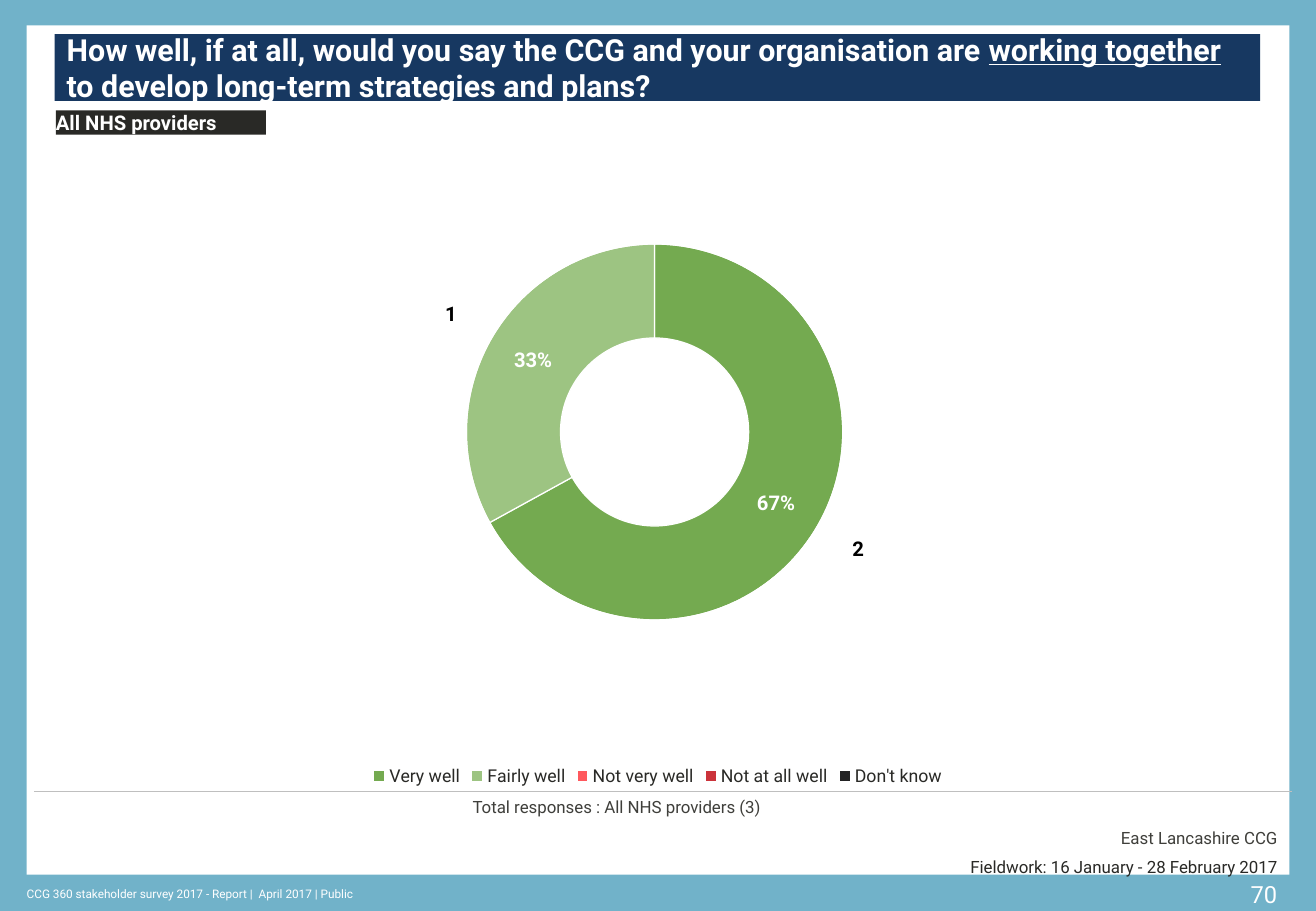
from lxml import etree
from pptx import Presentation
from pptx.chart.data import CategoryChartData
from pptx.dml.color import RGBColor
from pptx.enum.chart import XL_CHART_TYPE, XL_LEGEND_POSITION
from pptx.enum.shapes import MSO_CONNECTOR, MSO_SHAPE
from pptx.enum.text import MSO_ANCHOR, PP_ALIGN
from pptx.oxml.ns import qn
from pptx.util import Inches, Pt

COLORS = {
    "frame": "71B2C9", "white": "FFFFFF", "navy": "173861", "dark": "292926",
    "grey": "3F3F3B", "rule": "BFBFBF", "black": "000000",
}
ANSWERS = {
    "Very well": "74AA50", "Fairly well": "9DC482", "Not very well": "FF585D",
    "Not at all well": "CB333B", "Don't know": "222223",
}
PERCENTAGES = (67, 33, 0, 0, 0)
COUNTS = (2, 1, 0, 0, 0)
FONT = "Roboto"


def color(name):
    """Return the named colour of the slide."""
    return RGBColor.from_string(COLORS[name])


def style_font(font, size, name, bold=False):
    """Set size, colour and weight of a font."""
    font.name, font.size, font.bold = FONT, Pt(size), bold
    font.color.rgb = color(name)


def add_panel(page, box, fill):
    """Add a plain filled rectangle."""
    panel = page.shapes.add_shape(MSO_SHAPE.RECTANGLE, *map(Inches, box))
    panel.shadow.inherit = False
    panel.fill.solid()
    panel.fill.fore_color.rgb = color(fill)
    panel.line.fill.background()
    return panel


def prepare_frame(shape, inset=0.0, anchor=MSO_ANCHOR.TOP):
    """Set wrapping, insets and anchor of a text frame."""
    frame = shape.text_frame
    frame.word_wrap = True
    frame.vertical_anchor = anchor
    frame.margin_left = frame.margin_right = Inches(inset)
    frame.margin_top = frame.margin_bottom = Inches(inset / 2)
    return frame


def write(para, text, size, name, align=PP_ALIGN.LEFT, bold=False):
    """Fill a paragraph with text in one style."""
    para.text = text
    para.alignment = align
    style_font(para.font, size, name, bold)


def add_note(page, box, text, size, name, align=PP_ALIGN.LEFT, anchor=MSO_ANCHOR.TOP):
    """Add a one-line text box without insets."""
    frame = prepare_frame(page.shapes.add_textbox(*map(Inches, box)), anchor=anchor)
    write(frame.paragraphs[0], text, size, name, align)


def add_heading(page, left, top):
    """Add the question bar and the group tag below it."""
    bar = add_panel(page, (left, top, 9.92, 0.55), "navy")
    para = prepare_frame(bar, 0.1, MSO_ANCHOR.MIDDLE).paragraphs[0]
    para.alignment = PP_ALIGN.LEFT
    style_font(para.font, 18, "white", True)
    para.add_run().text = "How well, if at all, would you say the CCG and your organisation are "
    stressed = para.add_run()
    stressed.text = "working together"
    stressed.font.underline = True
    para.add_run().text = " to develop long-term strategies and plans?"
    tag = add_panel(page, (left + 0.01, top + 0.63, 1.73, 0.2), "dark")
    write(prepare_frame(tag).paragraphs[0], "All NHS providers", 12, "white", bold=True)


def make_layout(x, y, w, h, inner=False):
    """Build a manual chart layout from fractions of the chart area."""
    layout = etree.Element(qn("c:layout"))
    manual = etree.SubElement(layout, qn("c:manualLayout"))
    settings = [("layoutTarget", "inner")] if inner else []
    settings += [("xMode", "edge"), ("yMode", "edge"), ("x", x), ("y", y), ("w", w), ("h", h)]
    for tag, value in settings:
        etree.SubElement(manual, qn(f"c:{tag}")).set("val", str(value))
    return layout


def style_ring(ring, values, fills, label_color, number_format):
    """Colour the slices of a ring and label those above zero."""
    for index, value in enumerate(values):
        look = ring.points[index].format
        if fills:
            look.fill.solid()
            look.fill.fore_color.rgb = RGBColor.from_string(fills[index])
        else:
            look.fill.background()
        look.line.color.rgb = color("white")
        look.line.width = Pt(0.75)
    labels = ring.data_labels
    labels.show_value = True
    labels.number_format = number_format
    labels.number_format_is_linked = False
    style_font(labels.font, 12, label_color, True)
    zeros = [index for index, value in enumerate(values) if value == 0]
    for place, index in enumerate(zeros):
        hidden = etree.Element(qn("c:dLbl"))
        etree.SubElement(hidden, qn("c:idx")).set("val", str(index))
        etree.SubElement(hidden, qn("c:delete")).set("val", "1")
        labels._element.insert(place, hidden)


def add_doughnut(page, box):
    """Add the doughnut of answers with an invisible outer ring of counts."""
    data = CategoryChartData()
    data.categories = list(ANSWERS)
    data.add_series("Series 1", PERCENTAGES)
    data.add_series("Series 2", COUNTS)
    chart = page.shapes.add_chart(XL_CHART_TYPE.DOUGHNUT, *map(Inches, box), data).chart
    chart.has_title = False
    style_font(chart.font, 18, "dark")
    chart.has_legend = True
    chart.legend.position = XL_LEGEND_POSITION.BOTTOM
    chart.legend.include_in_layout = False
    style_font(chart.legend.font, 10.5, "dark")
    chart.legend._element.find(qn("c:legendPos")).addnext(make_layout(0.15, 0.87, 0.64, 0.07))

    plot = chart.plots[0]
    plot.vary_by_categories = True
    percent_ring, count_ring = plot.series
    style_ring(percent_ring, PERCENTAGES, list(ANSWERS.values()), "white", '0"%"')
    style_ring(count_ring, COUNTS, None, "black", "0")
    plot._element.find(qn("c:holeSize")).set("val", "38")
    area = plot._element.getparent()
    for layout in area.findall(qn("c:layout")):
        area.remove(layout)
    area.insert(0, make_layout(0.283, 0, 0.429, 0.881, inner=True))


def add_base(page, left, top):
    """Add the rule and the notes on responses and fieldwork."""
    rule = page.shapes.add_connector(
        MSO_CONNECTOR.STRAIGHT, Inches(left), Inches(top), Inches(left + 10.35), Inches(top))
    rule.line.color.rgb = color("rule")
    rule.line.width = Pt(0.25)
    etree.SubElement(rule._element.spPr, qn("a:effectLst"))
    notes = page.shapes.add_textbox(
        Inches(left + 3.51), Inches(top), Inches(6.82), Inches(0.38))
    frame = prepare_frame(notes, 0.1)
    write(frame.paragraphs[0], "Total responses : All NHS providers (3)", 10, "grey")
    owner = frame.add_paragraph()
    write(owner, "East Lancashire CCG", 10, "grey", PP_ALIGN.RIGHT)
    owner.space_before = Pt(6)
    add_note(page, (left + 7.34, top + 0.54, 2.89, 0.17),
             "Fieldwork: 16 January - 28 February 2017", 10, "dark", PP_ALIGN.RIGHT)


def add_footer(page, left, top):
    """Add the report line and the page number."""
    add_note(page, (left, top + 0.02, 5.35, 0.2),
             "CCG 360 stakeholder survey 2017 - Report |  April 2017 | Public",
             7, "white", anchor=MSO_ANCHOR.MIDDLE)
    add_note(page, (left + 9.85, top, 0.44, 0.24), "70", 14, "white", PP_ALIGN.RIGHT)


def main():
    """Build the survey slide and save it."""
    deck = Presentation()
    deck.slide_width, deck.slide_height = Inches(10.83), Inches(7.5)
    page = deck.slides.add_slide(deck.slide_layouts[6])
    page.background.fill.solid()
    page.background.fill.fore_color.rgb = color("frame")
    add_panel(page, (0.22, 0.21, 10.39, 6.99), "white")
    add_footer(page, 0.22, 7.24)
    add_doughnut(page, (0, 1.23, 10.83, 5.28))
    add_heading(page, 0.45, 0.28)
    add_base(page, 0.28, 6.51)
    deck.save("out.pptx")


if __name__ == "__main__":
    main()
